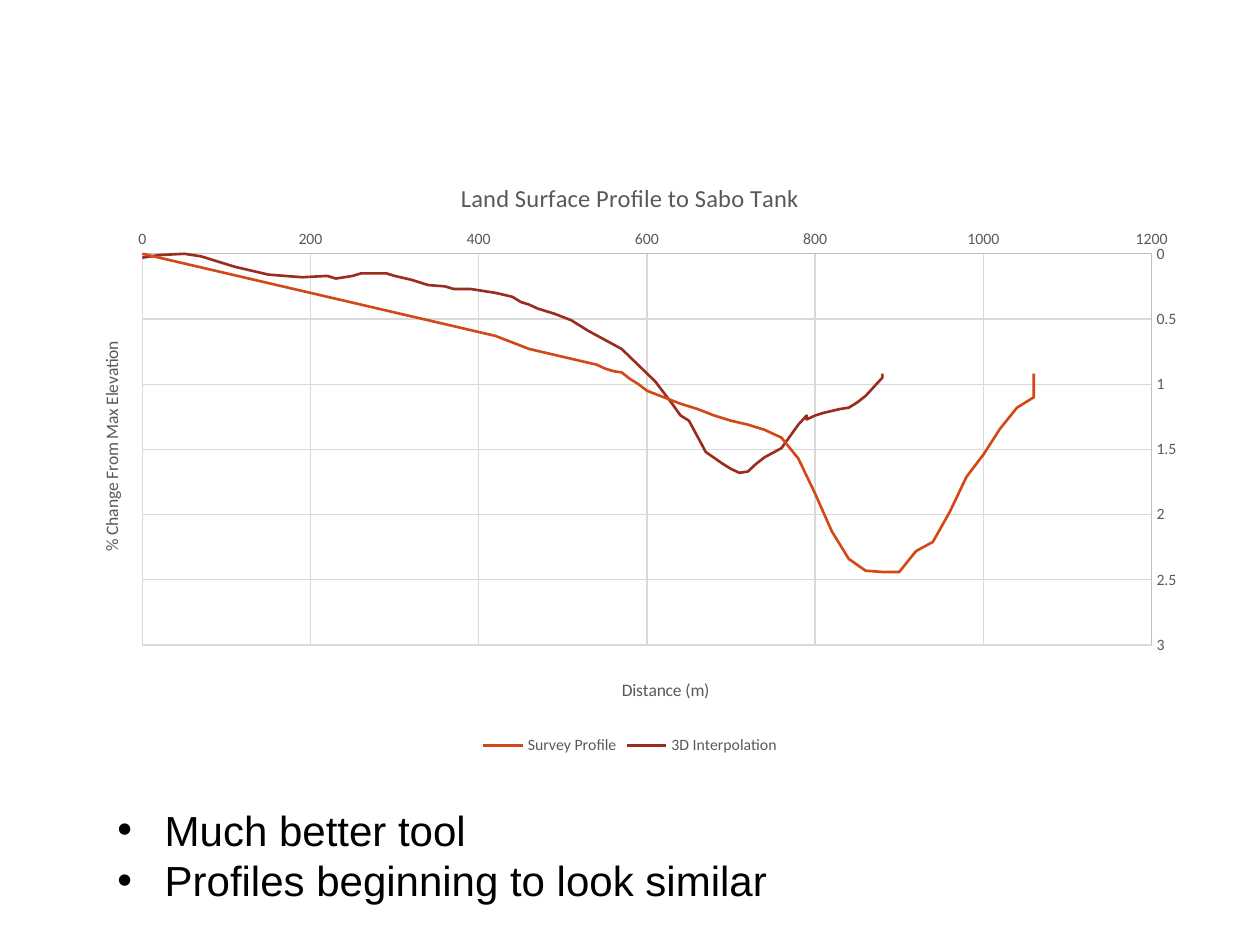
import dataclasses
import typing

import lxml.etree
import pptx
import pptx.chart.data
import pptx.dml.color
import pptx.enum.chart
import pptx.oxml.ns
import pptx.util

Pt = pptx.util.Pt
qn = pptx.oxml.ns.qn
enum = pptx.enum.chart
GREY = "595959"
GRID = "D9D9D9"
EDGE = "BFBFBF"


@dataclasses.dataclass
class Curve:
    name: str
    color: str
    xs: list[float]
    ys: list[float]


@dataclasses.dataclass
class Scale:
    title: str
    top: float
    step: float
    place: dict[str, float]


CURVES = [
    Curve(
        "Survey Profile", "D34817",
        [*range(0, 541, 20), 550, 560, 570, 580, 590, *range(600, 1061, 20), 1060],
        [*[n * 3 / 100 for n in range(22)],
         0.68, 0.73, 0.76, 0.79, 0.82, 0.85, 0.88, 0.9, 0.91, 0.96, 1, 1.05,
         1.1, 1.15, 1.19, 1.24, 1.28, 1.31, 1.35, 1.41, 1.57, 1.84, 2.13, 2.34,
         2.43, 2.44, 2.44, 2.28, 2.21, 1.98, 1.71, 1.54, 1.34, 1.18, 1.1, 0.92],
    ),
    Curve(
        "3D Interpolation", "9B2D1F",
        [0, 20, 50, 70, 80, 110, 150, 190, 220, 230, 240, 250, 260, 270, 290,
         300, 320, 340, 360, 370, 390, 420, 440, 450, 460, 470, 490, 510, 530,
         570, 610, 630, 640, 650, 670, 690, 700, 710, 720, 730, 740, 760, 780,
         790, 790, 800, 810, 830, 840, 850, 860, 880, 880],
        [0.03, 0.01, 0, 0.02, 0.04, 0.1, 0.16, 0.18, 0.17, 0.19, 0.18, 0.17,
         0.15, 0.15, 0.15, 0.17, 0.2, 0.24, 0.25, 0.27, 0.27, 0.3, 0.33, 0.37,
         0.39, 0.42, 0.46, 0.51, 0.59, 0.73, 0.98, 1.15, 1.24, 1.28, 1.52, 1.61,
         1.65, 1.68, 1.67, 1.61, 1.56, 1.49, 1.31, 1.24, 1.27, 1.24, 1.22, 1.19,
         1.18, 1.14, 1.09, 0.95, 0.92],
    ),
]
ACROSS = Scale("Distance (m)", 1200, 200, {"x": 0.49, "y": 0.86})
DOWN = Scale("% Change From Max Elevation", 3, 0.5, {"x": 0.03, "y": 0.3})


def paint(color: str) -> pptx.dml.color.RGBColor:
    return pptx.dml.color.RGBColor.from_string(color)


def style(font: typing.Any, size: float, color: str, face: str = "Calibri") -> None:
    font.name = face
    font.size = Pt(size)
    font.bold = False
    font.color.rgb = paint(color)


def write(frame: typing.Any, *lines: str, size: float, color: str = GREY,
          face: str = "Calibri", indent: float = 0) -> None:
    for i, line in enumerate(lines):
        para = frame.add_paragraph() if i else frame.paragraphs[0]
        run = para.add_run()
        run.text = line
        if indent:
            props = para._p.get_or_add_pPr()
            props.set("marL", str(Pt(indent)))
            props.set("indent", str(-Pt(indent)))
            lxml.etree.SubElement(props, qn("a:buFont"), typeface="Arial")
            lxml.etree.SubElement(props, qn("a:buChar"), char="•")
        style(run.font, size, color, face)


def stroke(line: typing.Any, color: str, width: float = 0.75) -> None:
    line.color.rgb = paint(color)
    line.width = Pt(width)


def place(node: typing.Any, inner: bool = False, **spots: float) -> None:
    for old in node.findall(qn("c:layout")):
        node.remove(old)
    layout = lxml.etree.Element(qn("c:layout"))
    manual = lxml.etree.SubElement(layout, qn("c:manualLayout"))
    if inner:
        lxml.etree.SubElement(manual, qn("c:layoutTarget"), val="inner")
    for mode in ("xMode", "yMode"):
        lxml.etree.SubElement(manual, qn(f"c:{mode}"), val="edge")
    for key, spot in spots.items():
        lxml.etree.SubElement(manual, qn(f"c:{key}"), val=str(spot))
    node.insert(0 if inner else 1, layout)


def set_axis(axis: typing.Any, scale: Scale) -> None:
    axis.minimum_scale = 0
    axis.maximum_scale = scale.top
    axis.major_unit = scale.step
    axis.major_tick_mark = axis.minor_tick_mark = enum.XL_TICK_MARK.NONE
    axis.has_major_gridlines = True
    stroke(axis.major_gridlines.format.line, GRID)
    stroke(axis.format.line, EDGE)
    style(axis.tick_labels.font, 9, GREY)
    axis.tick_labels.number_format = "General"
    axis.tick_labels.number_format_is_linked = False
    write(axis.axis_title.text_frame, scale.title, size=10)
    place(axis.axis_title._element, **scale.place)


def add_plot(slide: typing.Any) -> None:
    data = pptx.chart.data.XyChartData()
    for curve in CURVES:
        series = data.add_series(curve.name)
        for x, y in zip(curve.xs, curve.ys):
            series.add_data_point(x, y)
    chart = slide.shapes.add_chart(
        enum.XL_CHART_TYPE.XY_SCATTER_SMOOTH_NO_MARKERS,
        Pt(36), Pt(90), Pt(648), Pt(344), data).chart
    style(chart.font, 10, "000000")
    chart.has_title = True
    write(chart.chart_title.text_frame, "Land Surface Profile to Sabo Tank", size=14)
    chart.has_legend = True
    chart.legend.position = enum.XL_LEGEND_POSITION.BOTTOM
    chart.legend.include_in_layout = False
    style(chart.legend.font, 9, GREY)
    set_axis(chart.category_axis, ACROSS)
    set_axis(chart.value_axis, DOWN)
    chart.value_axis.reverse_order = True
    chart.category_axis.crosses = enum.XL_AXIS_CROSSES.MAXIMUM
    chart.plots[0].vary_by_categories = False
    for series, curve in zip(chart.plots[0].series, CURVES):
        stroke(series.format.line, curve.color, 1.5)
        series.marker.style = enum.XL_MARKER_STYLE.NONE
    area = chart._chartSpace.find(".//" + qn("c:plotArea"))
    place(area, inner=True, x=0.07, y=0.16, w=0.89, h=0.65)


def main() -> None:
    deck = pptx.Presentation()
    deck.slide_width = Pt(720)
    deck.slide_height = Pt(540)
    slide = deck.slides.add_slide(deck.slide_layouts[6])
    add_plot(slide)
    box = slide.shapes.add_textbox(Pt(60), Pt(456), Pt(600), Pt(65.5))
    box.text_frame.word_wrap = True
    write(box.text_frame, "Much better tool", "Profiles beginning to look similar",
          size=24, color="000000", face="Arial", indent=27)
    deck.save("out.pptx")


if __name__ == "__main__":
    main()
